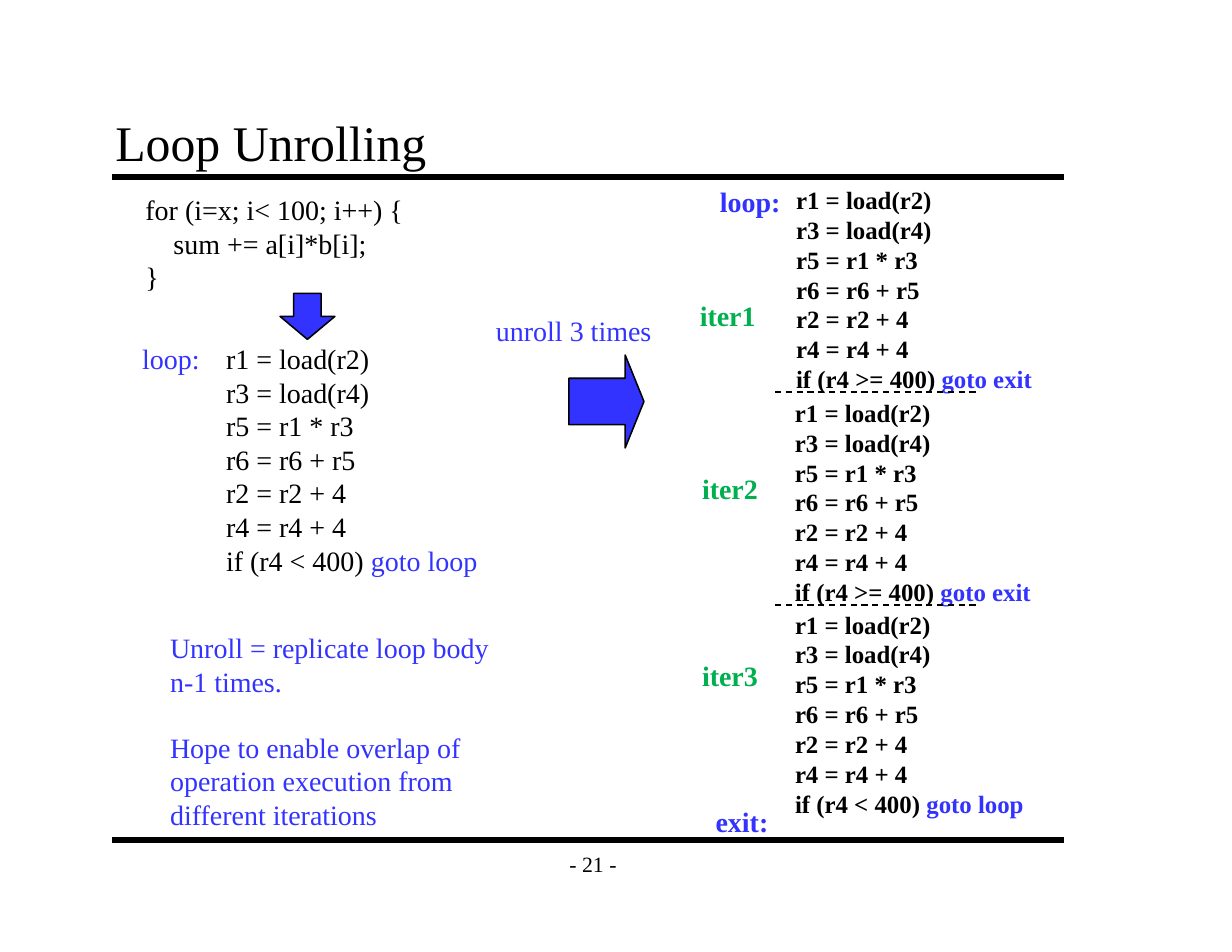
from pptx import Presentation
from pptx.dml.color import RGBColor
from pptx.enum.dml import MSO_LINE
from pptx.enum.shapes import MSO_CONNECTOR, MSO_SHAPE
from pptx.enum.text import MSO_ANCHOR, PP_ALIGN
from pptx.util import Pt
from lxml import etree

PX = 9144
STRAIGHT = MSO_CONNECTOR.STRAIGHT
DASH = MSO_LINE.DASH
DOWN_ARROW = MSO_SHAPE.DOWN_ARROW
RIGHT_ARROW = MSO_SHAPE.RIGHT_ARROW
MIDDLE, BOTTOM = MSO_ANCHOR.MIDDLE, MSO_ANCHOR.BOTTOM
CENTER = PP_ALIGN.CENTER
EFFECT_LIST = "{http://schemas.openxmlformats.org/drawingml/2006/main}effectLst"

THEME = {
    "font": "Times New Roman",
    "black": RGBColor(0, 0, 0),
    "blue": RGBColor(0x33, 0x33, 0xFF),
    "green": RGBColor(0x00, 0xB0, 0x50),
    "title": Pt(32),
    "body": Pt(18),
    "unrolled": Pt(16),
    "number": Pt(14),
}

presentation = Presentation()
presentation.slide_width = 1100 * PX
presentation.slide_height = 850 * PX
slide = presentation.slides.add_slide(presentation.slide_layouts[6])


def add_text(box, text, color="black", size="body", bold=False):
    shape = slide.shapes.add_textbox(*(length * PX for length in box))
    frame = shape.text_frame
    frame.word_wrap = False
    frame.text = text
    for paragraph in frame.paragraphs:
        for run in paragraph.runs:
            run.font.name = THEME["font"]
            run.font.size = THEME[size]
            run.font.bold = bold
            run.font.color.rgb = THEME[color]
    return frame


def add_line(left, right, y, weight):
    line = slide.shapes.add_connector(STRAIGHT, left * PX, y * PX, right * PX, y * PX)
    line.line.color.rgb = THEME["black"]
    line.line.width = Pt(weight)
    etree.SubElement(line._element.spPr, EFFECT_LIST)
    return line


for y in (158, 750):
    add_line(100, 950, y, 4)

title = add_text((92, 92, 850, 67), "Loop Unrolling", size="title")
title.vertical_anchor = BOTTOM
title.word_wrap = True
number = add_text((492, 750, 75, 42), "- 21 -", size="number")
number.vertical_anchor = MIDDLE
number.paragraphs[0].alignment = CENTER
for frame in (title, number):
    frame.margin_left = frame.margin_right = 11 * PX
    frame.margin_top = frame.margin_bottom = 6 * PX

source = add_text((120, 167, 252, 101), "for (i=x; i< 100; i++) {\nsum += a[i]*b[i];\n}")
source.paragraphs[1]._p.get_or_add_pPr().set("marL", str(Pt(18)))

loop_body = """r1 = load(r2)
r3 = load(r4)
r5 = r1 * r3
r6 = r6 + r5
r2 = r2 + 4
r4 = r4 + 4
"""
code_blocks = [
    ((192, 300, 245, 220), "if (r4 < 400) ", "goto loop", "body", False),
    ((701, 160, 236, 199), "if (r4 >= 400) ", "goto exit", "unrolled", True),
    ((700, 350, 234, 226), "if (r4 >= 400) ", "goto exit", "unrolled", True),
    ((700, 539, 225, 197), "if (r4 < 400) ", "goto loop", "unrolled", True),
]
for box, condition, jump, size, bold in code_blocks:
    code = add_text(box, loop_body + condition, size=size, bold=bold)
    run = code.paragraphs[-1].add_run()
    run.text = jump
    run.font.name = THEME["font"]
    run.font.size = THEME[size]
    run.font.bold = bold
    run.font.color.rgb = THEME["blue"]

for y in (350, 540):
    add_line(692, 875, y, 1).line.dash_style = DASH

labels = [
    ((117, 300, 72, 40), "loop:", "blue", False),
    ((433, 275, 159, 40), "unroll 3 times", "blue", False),
    ((633, 160, 74, 40), "loop:", "blue", True),
    ((615, 262, 70, 40), "iter1", "green", True),
    ((617, 416, 70, 40), "iter2", "green", True),
    ((617, 583, 70, 40), "iter3", "green", True),
    ((629, 713, 68, 40), "exit:", "blue", True),
]
for box, text, color, bold in labels:
    add_text(box, text, color, bold=bold)

remarks = add_text(
    (142, 558, 314, 192),
    "Unroll = replicate loop body\nn-1 times.\n"
    "Hope to enable overlap of\noperation execution from\ndifferent iterations",
    "blue",
)
remarks.paragraphs[2].space_before = Pt(21)

arrows = [
    (DOWN_ARROW, (250, 262, 49, 41), 0.5),
    (RIGHT_ARROW, (508, 317, 67, 83), 0.25),
]
for kind, box, head in arrows:
    arrow = slide.shapes.add_shape(kind, *(length * PX for length in box))
    arrow.adjustments[1] = head
    arrow.shadow.inherit = False
    arrow.fill.solid()
    arrow.fill.fore_color.rgb = THEME["blue"]
    arrow.line.color.rgb = THEME["black"]
    arrow.line.width = Pt(1)

presentation.save("out.pptx")
